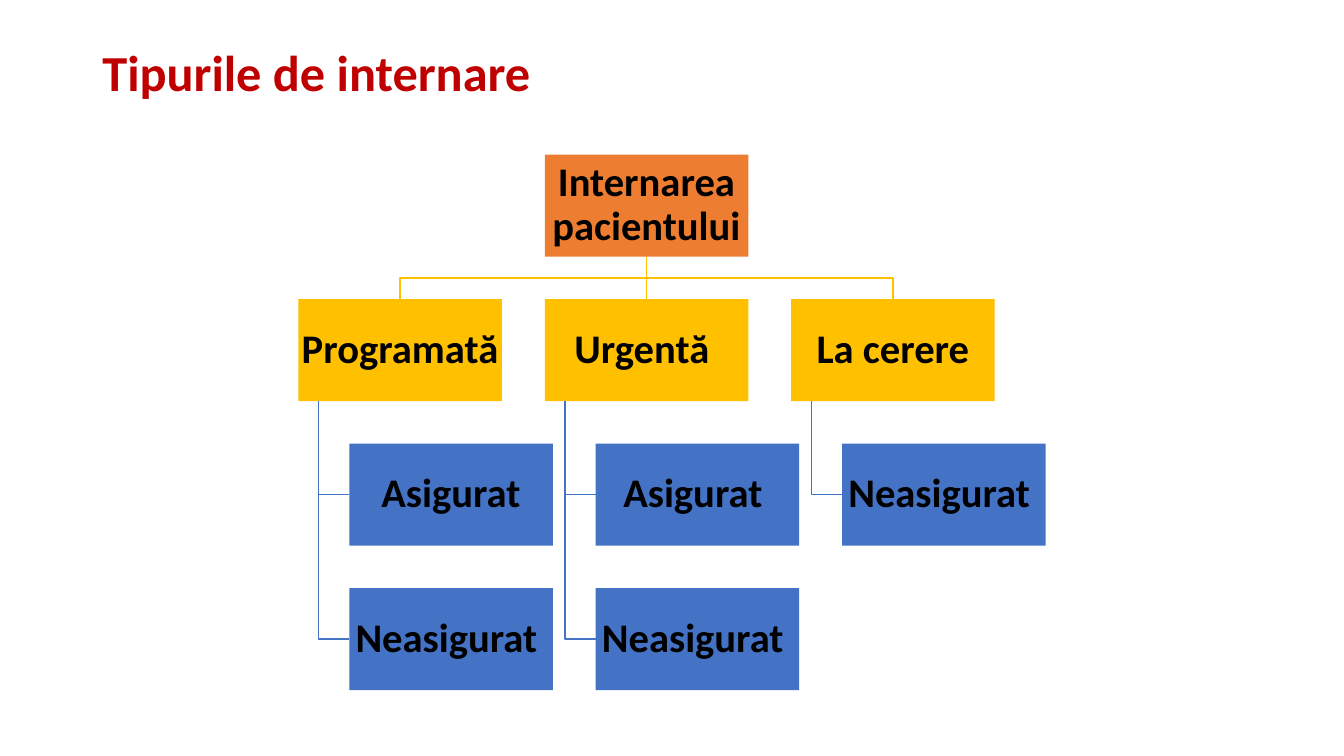
from dataclasses import dataclass

from lxml import etree
from pptx import Presentation
from pptx import util as u
from pptx.dml.color import RGBColor
from pptx.enum import shapes, text
from pptx.oxml import ns


@dataclass(frozen=True)
class Theme:
    font: str = "Calibri"
    title_size: int = 36
    box_size: int = 29
    title: str = "C00000"
    ink: str = "000000"
    root: str = "ED7D31"
    branch: str = "FFC000"
    leaf: str = "4472C4"


@dataclass(frozen=True)
class Box:
    left: float
    top: float
    width: float
    height: float

    @property
    def middle(self):
        return self.left + self.width / 2

    @property
    def centre(self):
        return self.top + self.height / 2

    @property
    def bottom(self):
        return self.top + self.height

    def lengths(self):
        return [u.Cm(n) for n in (self.left, self.top, self.width, self.height)]


THEME = Theme()
SLIDE_SIZE = (33.87, 19.05)
TITLE_BOX = Box(2.33, 1.02, 29.21, 1.75)
CHART_BOX = Box(7.52, 3.9, 18.83, 13.49)
BOX_SIZE = (5.13, 2.57)
COLUMN_STEP, ROW_STEP = 6.21, 3.64

ROOT = "Internarea pacientului"
BRANCHES = {
    "Programată": ["Asigurat", "Neasigurat "],
    "Urgentă ": ["Asigurat ", "Neasigurat "],
    "La cerere": ["Neasigurat "],
}


def set_all(target, values):
    for name, value in values.items():
        setattr(target, name, value)


def write(frame, words, size, colour, align, inset):
    """Fill a text frame with one bold paragraph."""
    margins = {f"margin_{side}": u.Cm(inset[0]) for side in ("left", "right")}
    margins |= {f"margin_{side}": u.Cm(inset[1]) for side in ("top", "bottom")}
    set_all(frame, margins | {
        "word_wrap": True,
        "auto_size": text.MSO_AUTO_SIZE.NONE,
        "vertical_anchor": text.MSO_ANCHOR.MIDDLE,
    })
    para = frame.paragraphs[0]
    set_all(para, {"alignment": align, "line_spacing": 0.9})
    span = para.add_run()
    span.text = words
    set_all(span.font, {"name": THEME.font, "size": u.Pt(size), "bold": True})
    span.font.color.rgb = RGBColor.from_string(colour)


def add_title(page, box, words):
    title = page.shapes.title
    set_all(title, dict(zip(("left", "top", "width", "height"), box.lengths())))
    write(title.text_frame, words, THEME.title_size, THEME.title,
          text.PP_ALIGN.LEFT, (0.25, 0.13))


def add_node(page, box, words, colour):
    node = page.shapes.add_shape(shapes.MSO_SHAPE.RECTANGLE, *box.lengths())
    node.shadow.inherit = False
    node.fill.solid()
    node.fill.fore_color.rgb = RGBColor.from_string(colour)
    node.line.fill.background()
    write(node.text_frame, words, THEME.box_size, THEME.ink,
          text.PP_ALIGN.CENTER, (0.05, 0.05))


def add_link(page, points, colour):
    """Draw a straight link through two points or a bent one through more."""
    corners = [(u.Cm(x), u.Cm(y)) for x, y in points]
    if len(corners) == 2:
        link = page.shapes.add_connector(
            shapes.MSO_CONNECTOR.STRAIGHT, *corners[0], *corners[1])
        etree.SubElement(link._element.spPr, ns.qn("a:effectLst"))
    else:
        builder = page.shapes.build_freeform(*corners[0])
        builder.add_line_segments(corners[1:], close=False)
        link = builder.convert_to_shape()
        link.fill.background()
        link.shadow.inherit = False
    link.line.color.rgb = RGBColor.from_string(colour)
    link.line.width = u.Pt(1)


def add_branch(page, box, words, leaves):
    """Place a branch box with its leaves hanging below, a quarter width in."""
    add_node(page, box, words, THEME.branch)
    stem = box.left + box.width / 10
    for row, leaf in enumerate(leaves, 1):
        leaf_box = Box(box.left + box.width / 4, box.top + row * ROW_STEP, *BOX_SIZE)
        add_link(page, [(stem, box.bottom), (stem, leaf_box.centre),
                        (leaf_box.left, leaf_box.centre)], THEME.leaf)
        add_node(page, leaf_box, leaf, THEME.leaf)


def add_tree(page, box):
    # Root box above the middle branch
    root = Box(box.left + COLUMN_STEP, box.top, *BOX_SIZE)
    add_node(page, root, ROOT, THEME.root)

    # Branches in equal columns, each linked to the root
    for column, (words, leaves) in enumerate(BRANCHES.items()):
        branch = Box(box.left + column * COLUMN_STEP, box.top + ROW_STEP, *BOX_SIZE)
        bend = (root.bottom + branch.top) / 2
        points = [(root.middle, root.bottom), (branch.middle, branch.top)]
        if branch.left != root.left:
            points[1:1] = [(root.middle, bend), (branch.middle, bend)]
        add_link(page, points, THEME.branch)
        add_branch(page, branch, words, leaves)


def main():
    deck = Presentation()
    deck.slide_width, deck.slide_height = map(u.Cm, SLIDE_SIZE)
    page = deck.slides.add_slide(deck.slide_layouts.get_by_name("Title Only"))
    add_title(page, TITLE_BOX, "Tipurile de internare")
    add_tree(page, CHART_BOX)
    deck.save("out.pptx")


if __name__ == "__main__":
    main()
